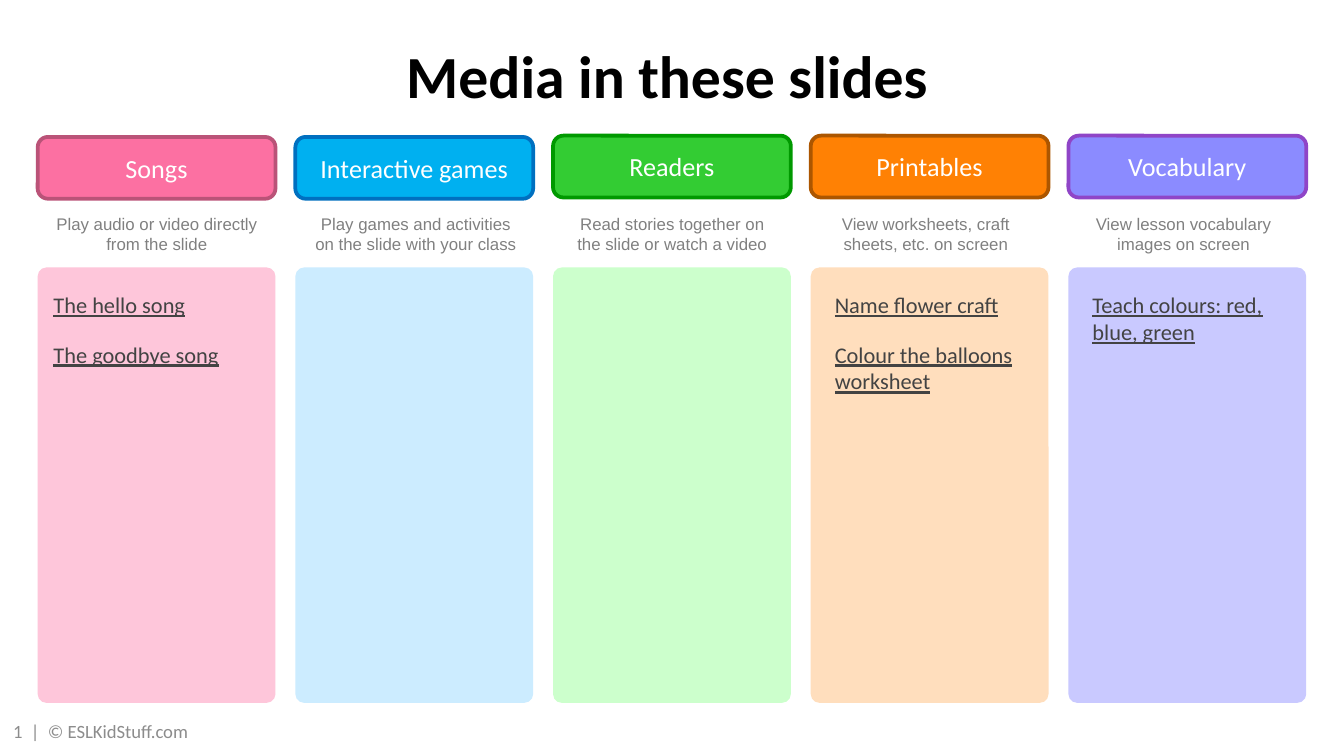
from pptx import Presentation
from pptx.dml.color import RGBColor
from pptx.enum.shapes import MSO_SHAPE
from pptx.enum.text import MSO_ANCHOR, PP_ALIGN
from pptx.util import Pt

ROUND = MSO_SHAPE.ROUNDED_RECTANGLE
TOP, MIDDLE = MSO_ANCHOR.TOP, MSO_ANCHOR.MIDDLE
LEFT, CENTER = PP_ALIGN.LEFT, PP_ALIGN.CENTER

TITLE = "Media in these slides"
FOOTER = "1  |  © ESLKidStuff.com"
COLUMNS = [
    dict(name="Songs", caption="Play audio or video directly from the slide",
         items=["The hello song", "The goodbye song"],
         top=73.4, shift=2.2, inset=7.2),
    dict(name="Interactive games", caption="Play games and activities on the slide with your class",
         items=[], top=73.4, shift=2.9, inset=7.2),
    dict(name="Readers", caption="Read stories together on the slide or watch a video",
         items=[], top=72.7, shift=2.2, inset=7.2),
    dict(name="Printables", caption="View worksheets, craft sheets, etc. on screen",
         items=["Name flower craft", "Colour the balloons worksheet"],
         top=72.7, shift=0, inset=11.5),
    dict(name="Vocabulary", caption="View lesson vocabulary images on screen",
         items=["Teach colours: red, blue, green"],
         top=72.7, shift=0, inset=11.5),
]
COLORS = {
    "title": "000000", "footer": "8C8C8C", "caption": "808080",
    "item": "434343", "header": "FFFFFF",
    "Songs": ("FC70A2", "BA5378", "FEC6DA"),
    "Interactive games": ("00B0F0", "0070C0", "CCECFF"),
    "Readers": ("33CC33", "009900", "CCFFCC"),
    "Printables": ("FF8104", "AC5600", "FFDEBD"),
    "Vocabulary": ("8B8BFF", "8F45C7", "C9C9FF"),
}
X0, PITCH, WIDTH = 20.2, 138.05, 127.4


def rgb(value):
    """Return the colour for a hex string."""
    return RGBColor.from_string(value)


def write(s, lines, size, color, font="Calibri", bold=False, underline=False,
          align=LEFT, anchor=TOP, inset=(7.2, 3.6), after=0):
    """Write lines as paragraphs into a shape."""
    tf = s.text_frame
    tf.word_wrap = True
    tf.vertical_anchor = anchor
    tf.margin_left, tf.margin_top = [Pt(v) for v in inset]
    tf.margin_right, tf.margin_bottom = Pt(7.2), Pt(3.6)
    for i, text in enumerate(lines):
        p = tf.add_paragraph() if i else tf.paragraphs[0]
        p.alignment = align
        p.space_after = Pt(after)
        r = p.add_run()
        r.text = text
        r.font.name, r.font.size = font, Pt(size)
        r.font.bold, r.font.underline = bold, underline
        r.font.color.rgb = rgb(COLORS[color])


def add_box(shapes, box, fill, line=None, radius=None):
    """Add a rounded rectangle."""
    s = shapes.add_shape(ROUND, *[Pt(v) for v in box])
    s.shadow.inherit = False
    s.fill.solid()
    s.fill.fore_color.rgb = rgb(fill)
    if line:
        s.line.color.rgb = rgb(line)
        s.line.width = Pt(2)
    else:
        s.line.fill.background()
    if radius is not None:
        s.adjustments[0] = radius
    return s


def add_text(shapes, box, text, size, color, **fmt):
    """Add a text box holding one paragraph."""
    write(shapes.add_textbox(*[Pt(v) for v in box]), [text], size, color, **fmt)


def add_column(shapes, x, col):
    """Add the header, caption and panel of one column."""
    fill, line, pale = COLORS[col["name"]]
    panel = add_box(shapes, (x, 143.3, WIDTH, 233.3), pale, radius=0.037)
    if col["items"]:
        write(panel, col["items"], 12, "item", underline=True,
              inset=(col["inset"], 11.5), after=12)
    header = add_box(shapes, (x, col["top"], WIDTH, 33.1), fill, line)
    write(header, [col["name"]], 14, "header", align=CENTER, anchor=MIDDLE)
    add_text(shapes, (x + col["shift"], 110.9, 123.1, 28.8), col["caption"],
             9, "caption", font="Arial", align=CENTER)


def main():
    """Build the slide and save it."""
    prs = Presentation()
    prs.slide_width, prs.slide_height = Pt(720), Pt(405)
    shapes = prs.slides.add_slide(prs.slide_layouts[6]).shapes
    add_text(shapes, (0, 380.9, 156.2, 21.6), FOOTER, 10, "footer", anchor=MIDDLE)
    add_text(shapes, (24.5, 17.3, 666, 38.9), TITLE, 32, "title",
             bold=True, align=CENTER)
    for i, col in enumerate(COLUMNS):
        add_column(shapes, X0 + i * PITCH, col)
    prs.save("out.pptx")


if __name__ == "__main__":
    main()
